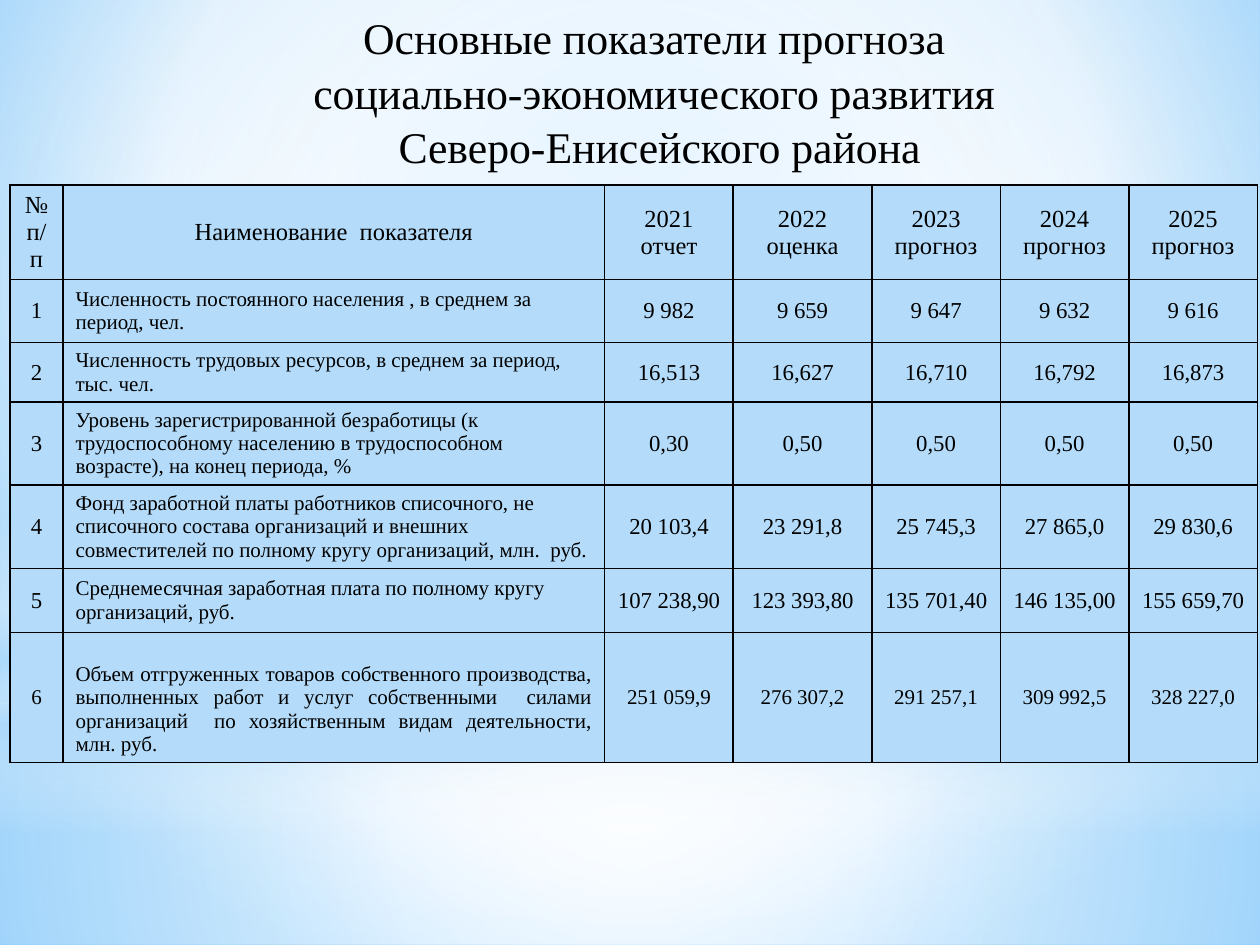
from lxml.etree import SubElement
from pptx import Presentation
from pptx.dml.color import RGBColor
from pptx.enum.shapes import MSO_SHAPE as SHAPE
from pptx.enum.text import MSO_ANCHOR as ANCHOR, PP_ALIGN as ALIGN
from pptx.oxml.ns import qn
from pptx.util import Inches, Pt

BLACK = RGBColor(0x00, 0x00, 0x00)
WHITE = RGBColor(0xFF, 0xFF, 0xFF)
PALE = RGBColor(0xB4, 0xDC, 0xFA)
SKY = RGBColor(0x9E, 0xD5, 0xFF)
BLUE = RGBColor(0x5B, 0xB9, 0xFF)
FONT = "Times New Roman"
CENTRE = (50, 50, 50, 50)


def set_gradient(fill, parent, stops, focus=None):
    """Stops are (position, colour, opacity) in percent; no focus means top to bottom."""
    fill.solid()
    solid = parent.find(qn("a:solidFill"))
    grad = SubElement(parent, qn("a:gradFill"), rotWithShape="1")
    parent.replace(solid, grad)
    gs_lst = SubElement(grad, qn("a:gsLst"))
    for pos, color, opacity in stops:
        gs = SubElement(gs_lst, qn("a:gs"), pos=str(pos * 1000))
        clr = SubElement(gs, qn("a:srgbClr"), val=str(color))
        if opacity < 100:
            SubElement(clr, qn("a:alpha"), val=str(opacity * 1000))
    if focus:
        circle = SubElement(grad, qn("a:path"), path="circle")
        SubElement(circle, qn("a:fillToRect"),
                   {side: str(v * 1000) for side, v in zip("ltrb", focus)})
    else:
        SubElement(grad, qn("a:lin"), ang="5400000", scaled="0")


def draw_borders(cell):
    tc_pr = cell._tc.get_or_add_tcPr()
    for i, side in enumerate(("a:lnL", "a:lnR", "a:lnT", "a:lnB")):
        ln = tc_pr.makeelement(qn(side), {"w": str(Pt(1))})
        fill = SubElement(ln, qn("a:solidFill"))
        SubElement(fill, qn("a:srgbClr"), val=str(BLACK))
        tc_pr.insert(i, ln)


prs = Presentation()
prs.slide_width, prs.slide_height = Inches(10), Inches(7.5)
s = prs.slides.add_slide(prs.slide_layouts[5])

# Background and its soft glows
bg_fill = s.background.fill
bg_fill.solid()
set_gradient(bg_fill, s._element.find(".//" + qn("p:bgPr")),
             [(0, SKY, 100), (60, WHITE, 100), (100, BLUE, 100)], (20, 10, 20, 60))

glows = [
    (SHAPE.RECTANGLE, 5.58, 1.92, CENTRE,
     [(0, WHITE, 91), (37, WHITE, 76), (100, PALE, 79)]),
    (SHAPE.RECTANGLE, 0, 5.58, CENTRE,
     [(0, WHITE, 89), (48, WHITE, 62), (100, PALE, 79)]),
    (SHAPE.RECTANGLE, 4.12, 2.5, None,
     [(0, WHITE, 0), (29, WHITE, 30), (45, PALE, 40),
      (55, WHITE, 26), (65, PALE, 60), (100, WHITE, 0)]),
    (SHAPE.OVAL, 1.75, 5.58, CENTRE, [(0, WHITE, 100), (56, WHITE, 0)]),
]
for kind, top, height, focus, stops in glows:
    sp = s.shapes.add_shape(kind, 0, Inches(top), prs.slide_width, Inches(height))
    sp.shadow.inherit = False
    sp.line.fill.background()
    set_gradient(sp.fill, sp._element.spPr, stops, focus)

# Title, brought in front of the glows
title = s.shapes.title
s.shapes._spTree.append(title._element)
title.left, title.top = Inches(0.75), Inches(0.02)
title.width, title.height = Inches(8.97), Inches(1.75)
tf = title.text_frame
tf.word_wrap = True
tf.vertical_anchor = ANCHOR.TOP
tf.text = ("Основные показатели прогноза \n"
           "социально-экономического развития \n"
           "Северо-Енисейского района")
for p in tf.paragraphs:
    p.alignment = ALIGN.CENTER
    p.line_spacing = 1.04
    p.font.name, p.font.size, p.font.color.rgb = FONT, Pt(25), BLACK

# Table of indicators
rows = [
    ("№ п/п", "Наименование  показателя", "2021 отчет", "2022 оценка",
     "2023 прогноз", "2024\nпрогноз", "2025\nпрогноз"),
    ("1", "Численность постоянного населения , в среднем за период, чел.",
     "9 982", "9 659", "9 647", "9 632", "9 616"),
    ("2", "Численность трудовых ресурсов, в среднем за период, тыс. чел.",
     "16,513", "16,627", "16,710", "16,792", "16,873"),
    ("3", "Уровень зарегистрированной безработицы (к трудоспособному населению "
     "в трудоспособном возрасте), на конец периода, %",
     "0,30", "0,50", "0,50", "0,50", "0,50"),
    ("4", "Фонд заработной платы работников списочного, не списочного состава "
     "организаций и внешних совместителей по полному кругу организаций, млн.  руб.",
     "20 103,4", "23 291,8", "25 745,3", "27 865,0", "29 830,6"),
    ("5", "Среднемесячная заработная плата по полному кругу организаций, руб.",
     "107 238,90", "123 393,80", "135 701,40", "146 135,00", "155 659,70"),
    ("6", "Объем отгруженных товаров собственного производства, выполненных работ "
     "и услуг собственными  силами организаций  по хозяйственным видам "
     "деятельности, млн. руб.",
     "251 059,9", "276 307,2", "291 257,1", "309 992,5", "328 227,0"),
]
col_widths = [0.42, 4.3, 1.02, 1.1, 1.02, 1.02, 1.02]
row_heights = [0.75, 0.5, 0.47, 0.66, 0.66, 0.51, 1.03]
last = len(rows) - 1

table = s.shapes.add_table(len(rows), len(col_widths), Inches(0.08), Inches(1.47),
                           Inches(sum(col_widths)), Inches(sum(row_heights))).table
for col, width in zip(table.columns, col_widths):
    col.width = Inches(width)
for row, height in zip(table.rows, row_heights):
    row.height = Inches(height)

for i, texts in enumerate(rows):
    for j, text in enumerate(texts):
        is_name = j == 1 and i > 0
        size = 14 if i == 0 else 12 if is_name or i == last else 13
        align = ALIGN.CENTER
        if is_name:
            align = ALIGN.JUSTIFY if i == last else ALIGN.LEFT
        cell = table.cell(i, j)
        cell.fill.solid()
        cell.fill.fore_color.rgb = PALE
        cell.vertical_anchor = ANCHOR.BOTTOM if is_name and i == last else ANCHOR.MIDDLE
        draw_borders(cell)
        cell.text_frame.text = text
        for p in cell.text_frame.paragraphs:
            p.alignment = align
            p.font.name, p.font.size = FONT, Pt(size)
            p.font.bold = False
            p.font.color.rgb = BLACK

prs.save("out.pptx")
